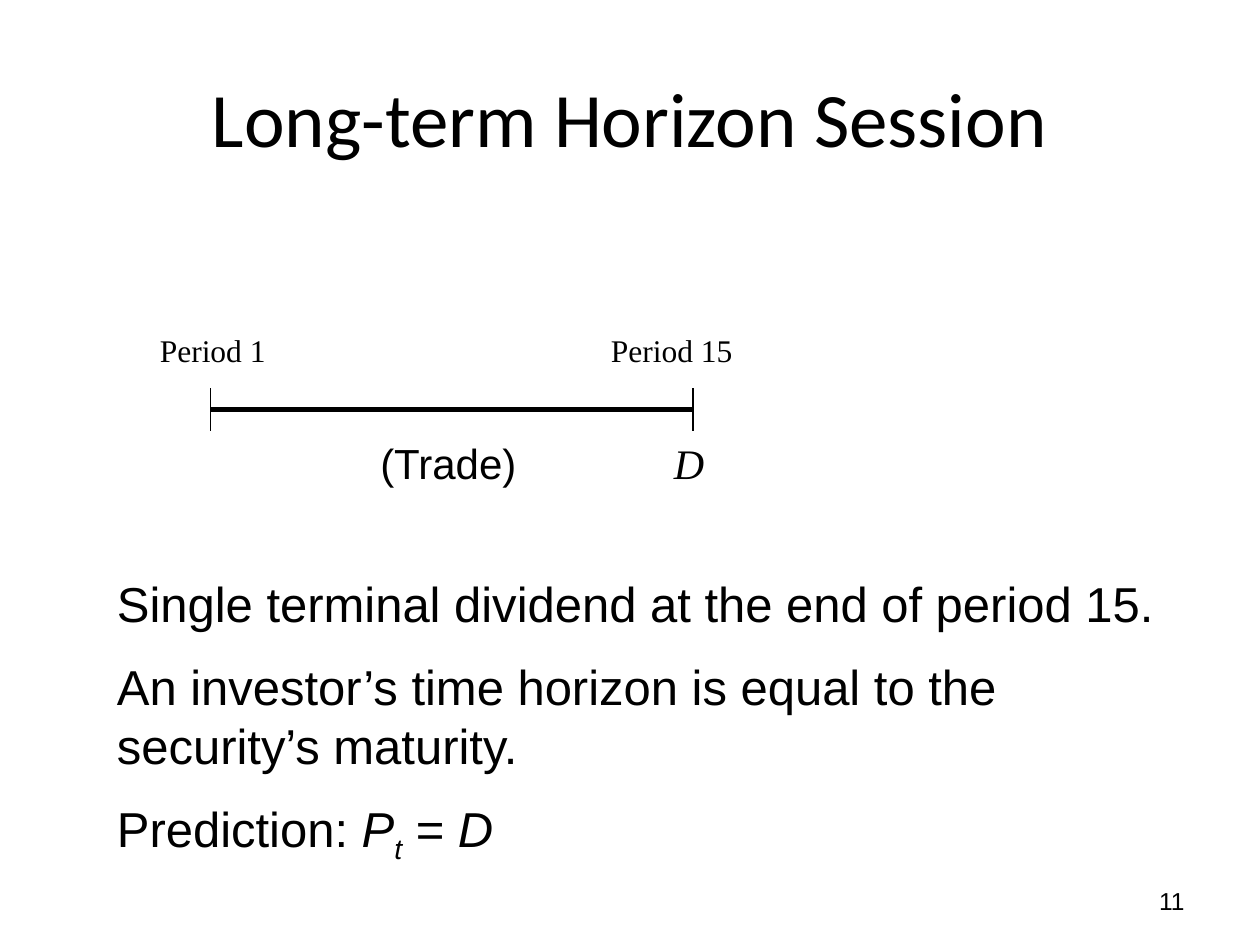
from lxml import etree
from pptx import Presentation
from pptx import util as u
from pptx.dml.color import RGBColor
from pptx.enum import shapes, text
from pptx.oxml import ns

COLORS = {"ink": "000000", "paper": "FFFFFF"}
BODY = {"name": "Arial", "size": u.Pt(28)}
PERIOD = {"name": "Times New Roman", "size": u.Pt(18)}
ITALIC = {"italic": True}


def add_text(slide, box, paragraphs, font, align=text.PP_ALIGN.LEFT,
             anchor=text.MSO_ANCHOR.TOP, wrap=True, before=0, after=0):
    """Each paragraph is a list of (wording, extra font values) runs."""
    frame = slide.shapes.add_textbox(*map(u.Inches, box)).text_frame
    frame.word_wrap = wrap
    frame.vertical_anchor = anchor
    for index, runs in enumerate(paragraphs):
        paragraph = frame.add_paragraph() if index else frame.paragraphs[0]
        paragraph.alignment = align
        paragraph.space_before = u.Pt(before if index else 0)
        paragraph.space_after = u.Pt(after if index < len(paragraphs) - 1 else 0)
        for wording, extra in runs:
            run = paragraph.add_run()
            run.text = wording
            run.font.color.rgb = RGBColor.from_string(COLORS["ink"])
            values = {**font, **extra}
            baseline = values.pop("baseline", None)
            for key, value in values.items():
                setattr(run.font, key, value)
            if baseline:
                run.font._element.set("baseline", str(baseline))
    return frame


def add_line(slide, x1, y1, x2, y2, width):
    line = slide.shapes.add_connector(
        shapes.MSO_CONNECTOR.STRAIGHT, *map(u.Inches, (x1, y1, x2, y2)))
    line.line.color.rgb = RGBColor.from_string(COLORS["ink"])
    line.line.width = u.Pt(width)
    etree.SubElement(line._element.spPr, ns.qn("a:effectLst"))


def add_title(slide, box):
    add_text(slide, box, [[("Long-term Horizon Session", {})]],
             {"name": "Calibri", "size": u.Pt(44)},
             text.PP_ALIGN.CENTER, text.MSO_ANCHOR.MIDDLE)


def add_timeline(slide, left, top, width):
    right = left + width
    axis = top + 0.67
    tick = 0.17

    # Axis with a tick at each end
    add_line(slide, left, axis, right, axis, 3)
    for x in (left, right):
        add_line(slide, x, axis - tick, x, axis + tick, 0.75)

    # Period labels above
    for wording, x, label_width in (("Period 1", left - 0.5, 1.08),
                                    ("Period 15", right - 0.75, 1.33)):
        add_text(slide, (x, top, label_width, 0.4), [[(wording, {})]], PERIOD)

    # Events below
    for wording, x, label_width, font in (
            ("(Trade)", left + 1.25, 1.3, {"name": "Arial"}),
            ("D", right - 0.25, 0.44, {"name": "Times New Roman", **ITALIC})):
        add_text(slide, (x, axis + tick, label_width, 0.5), [[(wording, {})]],
                 {"size": u.Pt(24), **font}, wrap=False)


def add_explanation(slide, box):
    add_text(slide, box, [
        [("Single terminal dividend at the end of period 15.", {})],
        [("An investor’s time horizon is equal to the security’s maturity.", {})],
        [("Prediction: ", {}), ("P", ITALIC),
         ("t", {**ITALIC, "baseline": -25000}), (" = ", {}), ("D", ITALIC)],
    ], BODY, before=5.6, after=8.4)


def add_page_number(slide, box):
    add_text(slide, box, [[("11", {})]], {"name": "Arial", "size": u.Pt(14)},
             text.PP_ALIGN.RIGHT, text.MSO_ANCHOR.MIDDLE)


def main():
    deck = Presentation()
    deck.slide_width, deck.slide_height = u.Inches(10), u.Inches(7.5)
    slide = deck.slides.add_slide(deck.slide_layouts[6])
    slide.background.fill.solid()
    slide.background.fill.fore_color.rgb = RGBColor.from_string(COLORS["paper"])

    add_title(slide, (0.5, 0.3, 9, 1.25))
    add_timeline(slide, 1.67, 2.58, 3.83)
    add_explanation(slide, (0.83, 4.5, 8.67, 2.44))
    add_page_number(slide, (7.17, 6.95, 2.33, 0.4))
    deck.save("out.pptx")


if __name__ == "__main__":
    main()
